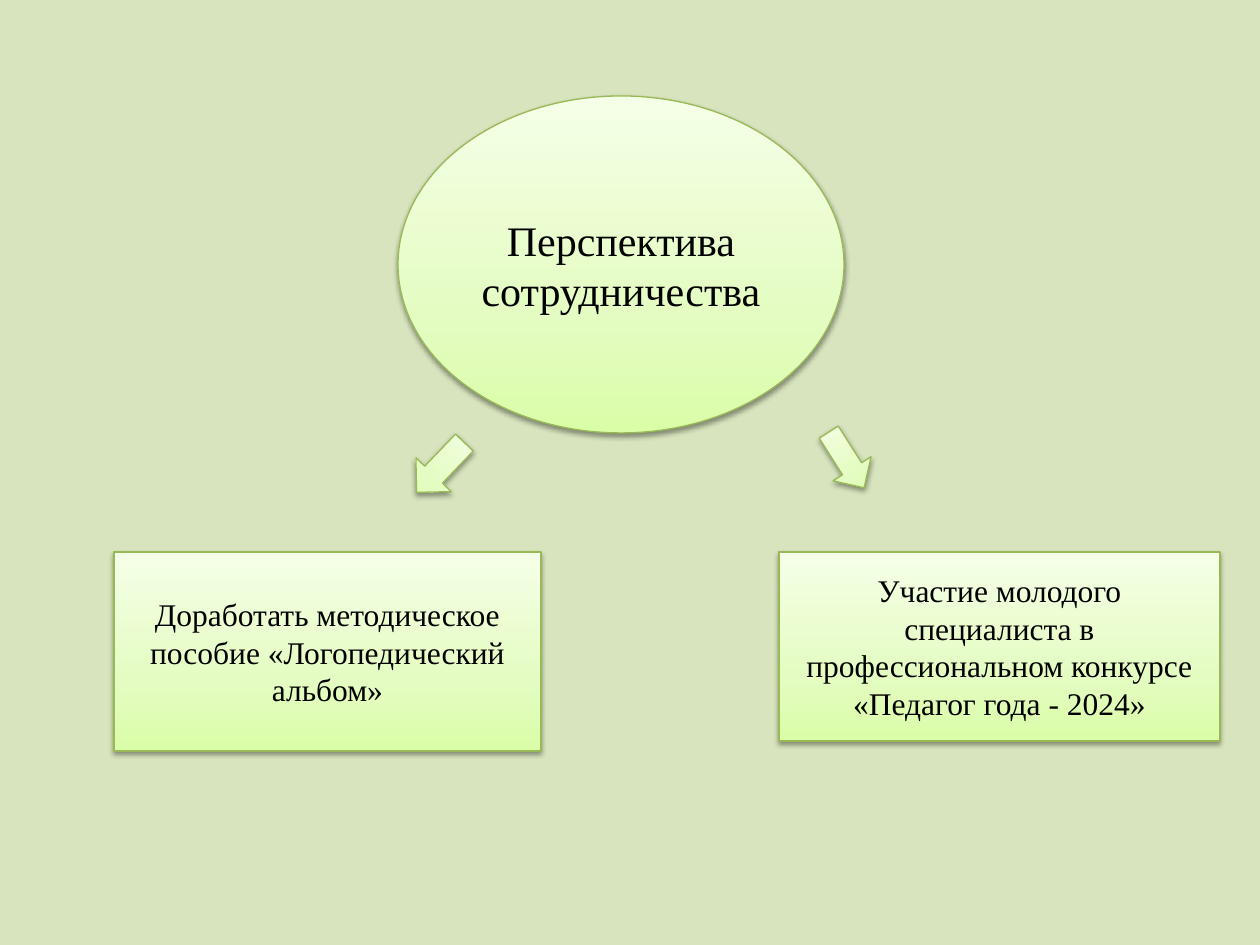
from pptx import Presentation
from pptx.dml.color import RGBColor
from pptx.enum.shapes import MSO_SHAPE as Preset
from pptx.enum.text import MSO_ANCHOR as Anchor, PP_ALIGN as Align
from pptx.oxml import parse_xml
from pptx.oxml.ns import nsdecls
from pptx.util import Inches, Pt

SCALE = Inches(1) / 126
GRADIENT = {0: "DAFDA7", 35: "E4FCC2", 100: "F5FFE7"}
OUTLINE, TEXT, BACKGROUND = "98B955", "000000", "D7E4BD"
FONT = "Times New Roman"


def px(length):
    return round(length * SCALE)


def color(value):
    return RGBColor.from_string(value)


def assign(target, values):
    for name, value in values.items():
        setattr(target, name, value)


class Diagram:
    """Draws the light green elements of a scheme on one slide."""

    def __init__(self, presentation):
        self.slide = presentation.slides.add_slide(presentation.slide_layouts[6])
        fill = self.slide.background.fill
        fill.solid()
        fill.fore_color.rgb = color(BACKGROUND)

    def node(self, preset, box, text, size):
        shape = self.styled_shape(preset, box)
        frame = shape.text_frame
        assign(frame, {"word_wrap": True, "vertical_anchor": Anchor.MIDDLE})
        paragraph = frame.paragraphs[0]
        assign(paragraph, {"text": text, "alignment": Align.CENTER})
        assign(paragraph.font, {"name": FONT, "size": Pt(size)})
        paragraph.font.color.rgb = color(TEXT)

    def arrow(self, box, rotation):
        shape = self.styled_shape(Preset.DOWN_ARROW, box)
        shape.rotation = rotation

    def styled_shape(self, preset, box):
        shape = self.slide.shapes.add_shape(preset, *map(px, box))
        shape.line.color.rgb = color(OUTLINE)
        shape.line.width = Pt(0.75)
        shape.shadow.inherit = False
        properties = shape._element.spPr
        stops = "".join(
            f'<a:gs pos="{place * 1000}"><a:srgbClr val="{value}"/></a:gs>'
            for place, value in GRADIENT.items()
        )
        properties.ln.addprevious(parse_xml(
            f'<a:gradFill {nsdecls("a")} rotWithShape="1"><a:gsLst>{stops}</a:gsLst>'
            '<a:lin ang="16200000" scaled="0"/></a:gradFill>'
        ))
        properties.ln.getnext().append(parse_xml(
            f'<a:outerShdw {nsdecls("a")} blurRad="{Pt(3.1)}" dist="{Pt(1.6)}" '
            'dir="5400000" rotWithShape="0"><a:srgbClr val="000000">'
            '<a:alpha val="38000"/></a:srgbClr></a:outerShdw>'
        ))
        return shape


def main():
    presentation = Presentation()
    assign(presentation, {"slide_width": px(1260), "slide_height": px(945)})
    diagram = Diagram(presentation)
    diagram.node(Preset.OVAL, (398, 96, 446, 337), "Перспектива сотрудничества", 24)
    diagram.node(
        Preset.RECTANGLE, (114, 552, 427, 199),
        "Доработать методическое пособие «Логопедический альбом»", 18,
    )
    diagram.node(
        Preset.RECTANGLE, (779, 552, 441, 189),
        "Участие молодого специалиста в профессиональном конкурсе «Педагог года - 2024»", 18,
    )
    diagram.arrow((416, 433, 49, 69), 43.8)
    diagram.arrow((824, 427, 45, 66), 327.6)
    presentation.save("out.pptx")


if __name__ == "__main__":
    main()
